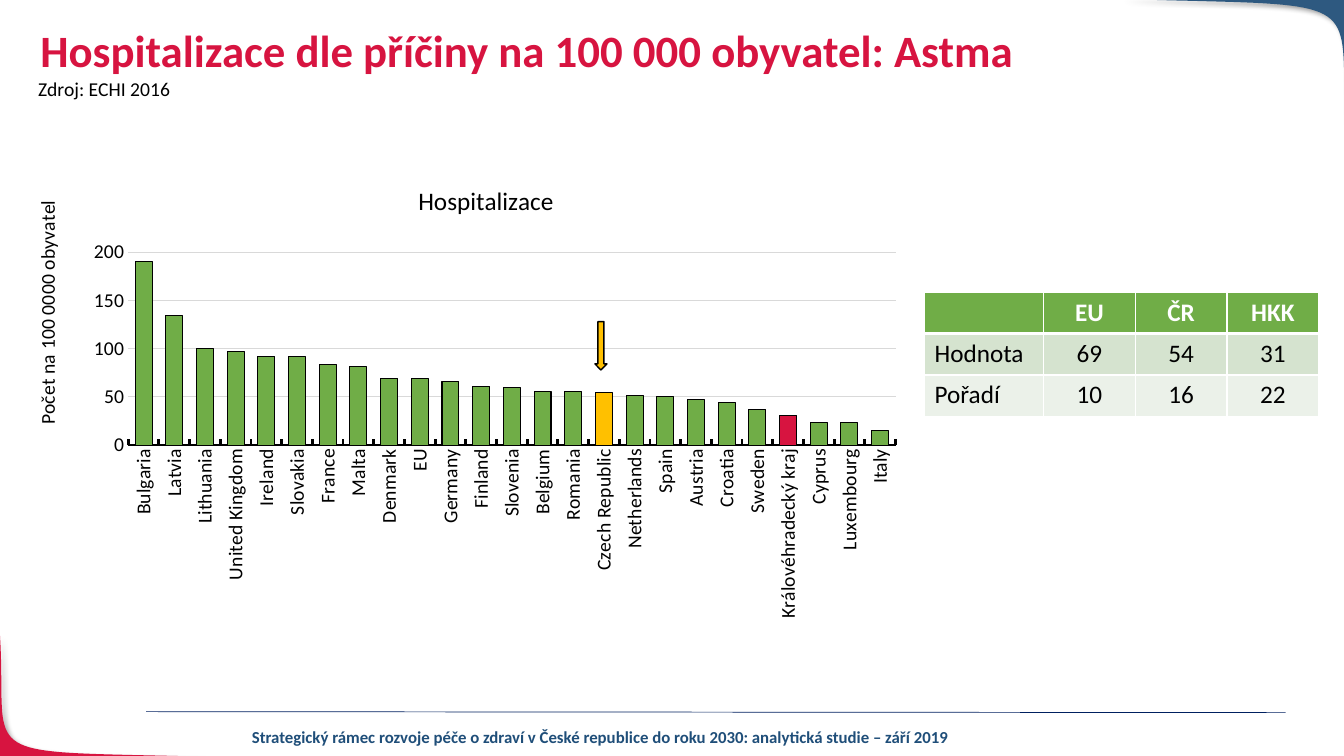
from pptx import Presentation, util as u
from pptx.chart.data import CategoryChartData
from pptx.dml.color import RGBColor
from pptx.enum import chart as ch, shapes, text
from pptx.oxml import parse_xml
from pptx.oxml.ns import nsdecls, qn

PX = 9144
FONT = "Calibri"
HUES = {"red": "D71440", "blue": "2E5980", "navy": "002060", "foot": "1F4E79",
        "green": "70AD47", "gold": "FFC000", "grid": "D9D9D9", "black": "000000",
        "white": "FFFFFF", "pale": "D5E3CF", "mist": "EBF1E9"}
RATES = {"Bulgaria": 190, "Latvia": 134, "Lithuania": 100, "United Kingdom": 97,
         "Ireland": 92, "Slovakia": 92, "France": 83, "Malta": 81, "Denmark": 69,
         "EU": 69, "Germany": 66, "Finland": 61, "Slovenia": 60, "Belgium": 55,
         "Romania": 55, "Czech Republic": 54, "Netherlands": 51, "Spain": 50,
         "Austria": 47, "Croatia": 44, "Sweden": 37, "Královéhradecký kraj": 31,
         "Cyprus": 23, "Luxembourg": 23, "Italy": 15}
MARKS = {"Czech Republic": "gold", "Královéhradecký kraj": "red"}
RANKS = [["", "EU", "ČR", "HKK"],
         ["Hodnota", "69", "54", "31"],
         ["Pořadí", "10", "16", "22"]]


def px(*nums):
    return [u.Emu(n * PX) for n in nums]


def hue(name):
    return RGBColor.from_string(HUES[name])


def style(font, size, name="black", bold=False):
    font.name, font.size, font.bold = FONT, u.Pt(size), bold
    font.color.rgb = hue(name)


def paint(fill, name):
    fill.solid()
    fill.fore_color.rgb = hue(name)


def stroke(line, name, width):
    line.color.rgb = hue(name)
    line.width = u.Pt(width)


def corner(slide, curve, tip, name):
    def bend(t):
        parts = ((1 - t) ** 3, 3 * t * (1 - t) ** 2, 3 * t * t * (1 - t), t ** 3)
        return tuple(round(PX * sum(k * p[i] for k, p in zip(parts, curve)))
                     for i in (0, 1))

    pts = [bend(n / 40) for n in range(41)] + [px(*tip)]
    build = slide.shapes.build_freeform(*pts[0], scale=1.0)
    build.add_line_segments(pts[1:], close=True)
    shape = build.convert_to_shape()
    paint(shape.fill, name)
    shape.line.fill.background()
    shape._element.spPr.append(parse_xml(
        f'<a:effectLst {nsdecls("a")}><a:outerShdw blurRad="50800" dist="38100" '
        'dir="2700000"><a:srgbClr val="000000"><a:alpha val="40000"/></a:srgbClr>'
        '</a:outerShdw></a:effectLst>'))


def rule(slide, ends):
    line = slide.shapes.add_connector(shapes.MSO_CONNECTOR.STRAIGHT, *px(*ends))
    stroke(line.line, "navy", 0.5)
    line._element.spPr.append(parse_xml(f'<a:effectLst {nsdecls("a")}/>'))


def label(slide, box, words, size, name="black", bold=False, center=False):
    frame = slide.shapes.add_textbox(*px(*box)).text_frame
    frame.word_wrap = center
    para = frame.paragraphs[0]
    para.text = words
    para.alignment = text.PP_ALIGN.CENTER if center else text.PP_ALIGN.LEFT
    style(para.font, size, name, bold)


def title(slide, box, words):
    shape = slide.shapes.title
    shape.left, shape.top, shape.width, shape.height = px(*box)
    frame = shape.text_frame
    frame.auto_size = text.MSO_AUTO_SIZE.NONE
    frame.vertical_anchor = text.MSO_ANCHOR.MIDDLE
    para = frame.paragraphs[0]
    para.text = words
    para.alignment = text.PP_ALIGN.LEFT
    para.line_spacing = 0.9
    style(para.font, 32, "red", True)


def place(node, spot, **dims):
    old = node.find(qn("c:layout"))
    if old is not None:
        node.remove(old)
    inner = '<c:layoutTarget val="inner"/>' if "w" in dims else ""
    modes = '<c:xMode val="edge"/><c:yMode val="edge"/>'
    sizes = "".join(f'<c:{k} val="{v}"/>' for k, v in dims.items())
    node.insert(spot, parse_xml(
        f'<c:layout {nsdecls("c")}><c:manualLayout>{inner}{modes}{sizes}'
        '</c:manualLayout></c:layout>'))


def caption(head, words, size, x, y):
    para = head.text_frame.paragraphs[0]
    para.text = words
    style(para.font, size)
    place(head._element, 1, x=x, y=y)


def turn(body):
    body.set("rot", "-5400000")
    body.set("vert", "horz")


def columns(slide, box):
    data = CategoryChartData()
    data.categories = list(RATES)
    data.add_series("Series 1", list(RATES.values()))
    chart = slide.shapes.add_chart(
        ch.XL_CHART_TYPE.COLUMN_CLUSTERED, *px(*box), data).chart
    chart.has_legend = False
    style(chart.font, 10)
    chart.has_title = True
    caption(chart.chart_title, "Hospitalizace", 18, 0.44, 0.02)
    place(chart._chartSpace.chart.plotArea, 0, x=0.12, y=0.18, w=0.86, h=0.42)

    plot = chart.plots[0]
    plot.gap_width, plot.overlap = 81, -27
    plot.vary_by_categories = False
    bars = plot.series[0]
    paint(bars.format.fill, "green")
    stroke(bars.format.line, "black", 0.75)
    for land, name in MARKS.items():
        point = bars.points[list(RATES).index(land)].format
        paint(point.fill, name)
        stroke(point.line, "black", 0.75)

    lands, rates = chart.category_axis, chart.value_axis
    for axis in (lands, rates):
        style(axis.tick_labels.font, 14)
        axis.minor_tick_mark = ch.XL_TICK_MARK.NONE
    lands.major_tick_mark = ch.XL_TICK_MARK.INSIDE
    stroke(lands.format.line, "black", 2)
    turn(lands._element.txPr.bodyPr)

    rates.major_tick_mark = ch.XL_TICK_MARK.NONE
    rates.minimum_scale, rates.maximum_scale, rates.major_unit = 0, 200, 50
    rates.tick_labels.number_format = "#,##0"
    rates.tick_labels.number_format_is_linked = False
    rates.format.line.fill.background()
    stroke(rates.major_gridlines.format.line, "grid", 0.75)
    caption(rates.axis_title, "Počet na 100 0000 obyvatel", 14, 0.01, 0.06)
    turn(rates.axis_title.text_frame._txBody.bodyPr)


def arrow(slide, box):
    shape = slide.shapes.add_shape(shapes.MSO_SHAPE.DOWN_ARROW, *px(*box))
    shape.shadow.inherit = False
    paint(shape.fill, "gold")
    stroke(shape.line, "black", 1)


def edge(cell, row):
    widths = {"L": 1, "R": 1, "T": 3 if row == 1 else 1, "B": 3 if row == 0 else 1}
    for side, width in widths.items():
        cell._tc.get_or_add_tcPr().append(parse_xml(
            f'<a:ln{side} {nsdecls("a")} w="{width * 12700}"><a:solidFill>'
            f'<a:srgbClr val="{HUES["white"]}"/></a:solidFill></a:ln{side}>'))


def table(slide, box, wide):
    grid = slide.shapes.add_table(len(RANKS), len(wide), *px(*box)).table
    for col, width in zip(grid.columns, px(*wide)):
        col.width = width
    for r, row in enumerate(RANKS):
        for c, words in enumerate(row):
            cell = grid.cell(r, c)
            edge(cell, r)
            paint(cell.fill, ("green", "pale", "mist")[r])
            para = cell.text_frame.paragraphs[0]
            para.text = words
            para.alignment = text.PP_ALIGN.CENTER if c else text.PP_ALIGN.LEFT
            style(para.font, 18, "black" if r else "white", r == 0)


def main():
    deck = Presentation()
    deck.slide_width, deck.slide_height = px(1333, 750)
    slide = deck.slides.add_slide(deck.slide_layouts[5])
    corner(slide, [(213, 751), (-34, 744), (8, 759), (0, 630)], (-1, 751), "red")
    corner(slide, [(1111, -1), (1370, 7), (1326, -10), (1335, 142)], (1335, -1), "blue")
    rule(slide, (145, 706, 1275, 707))
    label(slide, (191, 716, 809, 30),
          "Strategický rámec rozvoje péče o zdraví v České republice do roku 2030: "
          "analytická studie – září 2019", 12, "foot", True, True)
    label(slide, (28, 71, 152, 34), "Zdroj: ECHI 2016", 14)
    title(slide, (30, 18, 1150, 69),
          "Hospitalizace dle příčiny na 100 000 obyvatel: Astma")
    columns(slide, (21, 168, 885, 456))
    arrow(slide, (590, 319, 12, 48))
    table(slide, (917, 290, 391, 123), (118, 91, 91, 91))
    deck.save("out.pptx")


if __name__ == "__main__":
    main()
